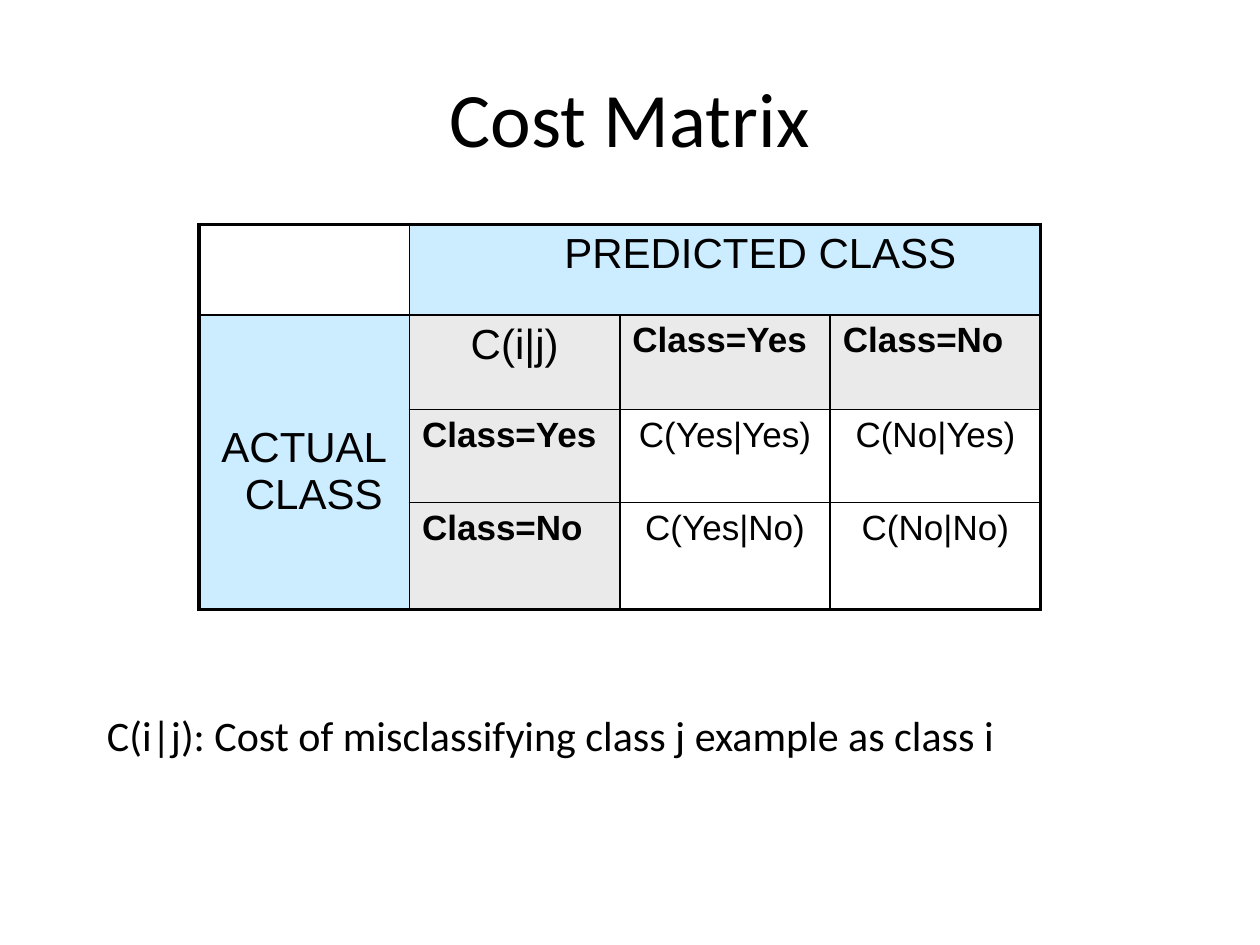
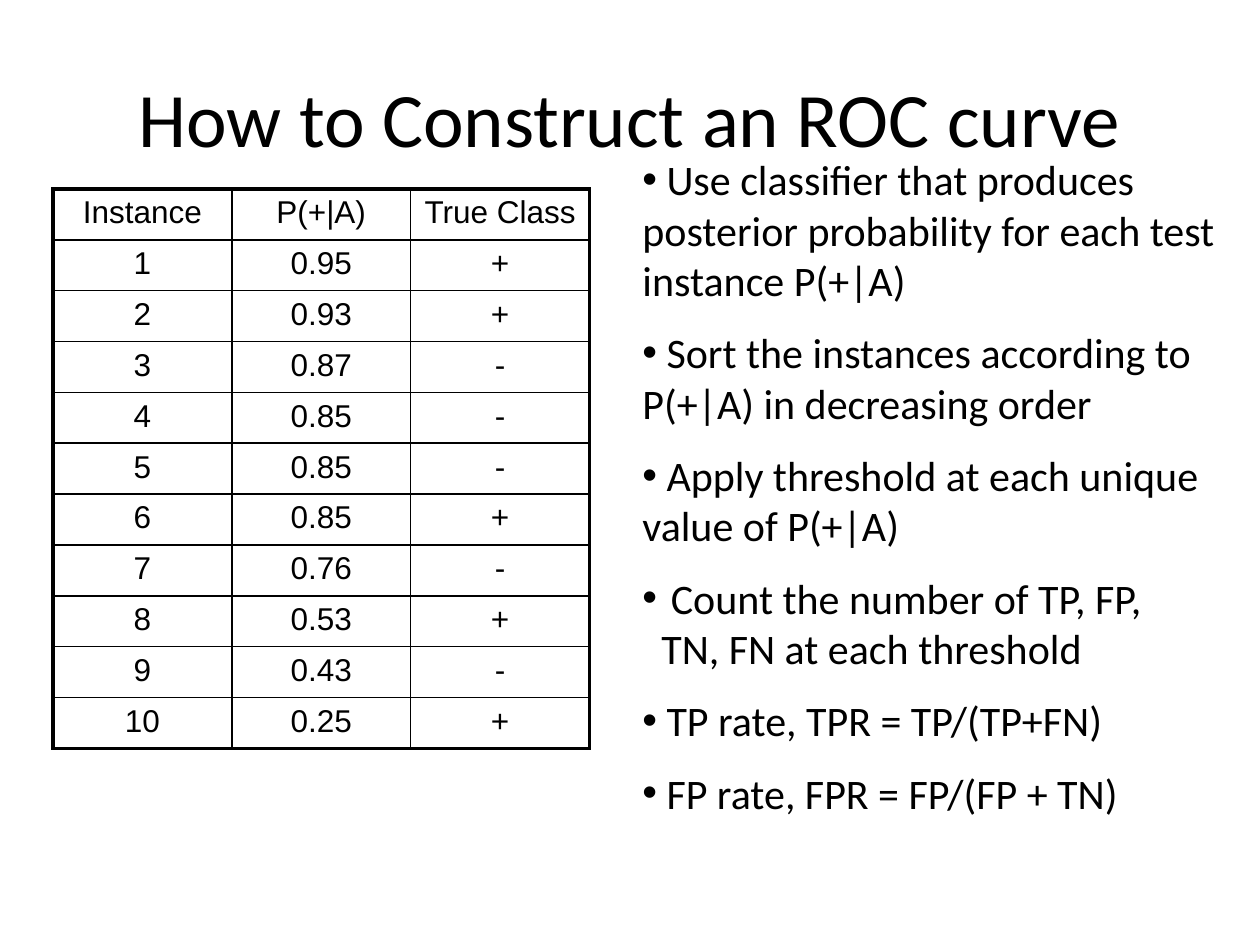
from lxml import etree
from pptx import Presentation, util as u
from pptx.dml.color import RGBColor
from pptx.enum import text as t
from pptx.oxml.ns import qn

INK, BLUE, GRAY = "000000", "CCECFF", "EAEAEA"
BARE = "{2D5ABB26-0587-4C30-8999-92F81FD0307C}"
MID, LEFT = t.PP_ALIGN.CENTER, t.PP_ALIGN.LEFT


def paint(fill, tint):
    fill.solid()
    fill.fore_color.rgb = RGBColor.from_string(tint)


def write(frame, *lines, size=24, font="Calibri", bold=False, align=LEFT,
          gap=0, dot=False, hang=0):
    frame.word_wrap = True
    for i, line in enumerate(lines):
        par = frame.paragraphs[0] if i == 0 else frame.add_paragraph()
        par.text = line
        par.alignment = align
        par.space_before = u.Pt(gap if i else 0)
        for run in par.runs:
            run.font.size, run.font.name, run.font.bold = u.Pt(size), font, bold
            paint(run.font.fill, INK)
        props = par._p.get_or_add_pPr()
        step = u.Inches(0.15 if "\v" in line else hang)
        props.set("marL", str(step))
        props.set("indent", str(-step))
        if dot:
            etree.SubElement(props, qn("a:buFont"), typeface="Arial")
            etree.SubElement(props, qn("a:buChar"), char="•")


deck = Presentation()
deck.slide_width, deck.slide_height = u.Inches(10), u.Inches(7.5)

costs = [
    ["", "PREDICTED CLASS", "", ""],
    ["ACTUAL\vCLASS", "C(i|j)", "Class=Yes", "Class=No"],
    ["", "Class=Yes", "C(Yes|Yes)", "C(No|Yes)"],
    ["", "Class=No", "C(Yes|No)", "C(No|No)"],
]
odds = ["0.95", "0.93", "0.87", "0.85", "0.85", "0.85", "0.76", "0.53", "0.43", "0.25"]
ranks = [["Instance", "P(+|A)", "True Class"]]
ranks += [[str(n), odd, sign] for n, (odd, sign) in enumerate(zip(odds, "++---+-+-+"), 1)]
steps = [
    " Use classifier that produces posterior probability for each test instance P(+|A)",
    " Sort the instances according to P(+|A) in decreasing order",
    " Apply threshold at each unique value of P(+|A)",
    " Count the number of TP, FP,\vTN, FN at each threshold",
    " TP rate, TPR = TP/(TP+FN)",
    " FP rate, FPR = FP/(FP + TN)",
]
note = ["C(i|j): Cost of misclassifying class j example as class i"]

pages = [
    ("Cost Matrix", costs, (1.58, 1.78), 1.67, [0.72, 0.75, 0.74, 0.85],
     note, (0.75, 5.58, 8.58, 1), dict(hang=0.32)),
    ("How to Construct an ROC curve", ranks, (0.42, 1.5), 1.42, [4.44 / 11] * 11,
     steps, (5, 1.17, 4.75, 5.49), dict(dot=True, gap=12.5)),
]

for title, data, spot, wide, highs, body, area, style in pages:
    page = deck.slides.add_slide(deck.slide_layouts[6])
    head = page.shapes.add_textbox(*map(u.Inches, (0.5, 0.3, 9, 1.25))).text_frame
    head.vertical_anchor = t.MSO_ANCHOR.MIDDLE
    write(head, title, size=44, align=MID)

    rows, cols = len(data), len(data[0])
    matrix = data is costs
    size = wide * cols, sum(highs)
    frame = page.shapes.add_table(rows, cols, *map(u.Inches, spot + size))
    grid = frame.table
    grid.first_row = grid.horz_banding = False
    next(frame.element.iter(qn("a:tableStyleId"))).text = BARE
    for col in grid.columns:
        col.width = u.Inches(wide)
    for row, high in zip(grid.rows, highs):
        row.height = u.Inches(high)
    if matrix:
        grid.cell(0, 1).merge(grid.cell(0, 3))
        grid.cell(1, 0).merge(grid.cell(3, 0))
        grid.cell(0, 1).margin_left = u.Inches(0.66)
        grid.cell(1, 0).margin_top = u.Inches(0.87)

    for r in range(rows):
        for c in range(cols):
            cell, word = grid.cell(r, c), data[r][c]
            label = matrix and word.startswith("Class=")
            if matrix and (r == 0) != (c == 0):
                paint(cell.fill, BLUE)
            elif matrix and r and c and (r == 1 or c == 1):
                paint(cell.fill, GRAY)
            else:
                cell.fill.background()
            if word:
                large = matrix and (r == 0 or c == 0 or word == "C(i|j)")
                write(cell.text_frame, word, font="Arial", bold=label,
                      size=24 if large else 20 if matrix else 18,
                      align=LEFT if label else MID)
            down = r + (cell.span_height if cell.is_merge_origin else 1)
            over = c + (cell.span_width if cell.is_merge_origin else 1)
            rims = dict(lnL=c == 0, lnR=over == cols, lnT=r == 0, lnB=down == rows)
            props = cell._tc.get_or_add_tcPr()
            spot_no = 0
            for side, rim in rims.items():
                if cell.is_spanned and not rim:
                    continue
                line = etree.Element(qn("a:" + side), w=str(u.Pt(2.25 if rim else 1)))
                tint = etree.SubElement(line, qn("a:solidFill"))
                etree.SubElement(tint, qn("a:srgbClr"), val=INK)
                props.insert(spot_no, line)
                spot_no += 1

    box = page.shapes.add_textbox(*map(u.Inches, area)).text_frame
    write(box, *body, **style)

deck.save("out.pptx")
